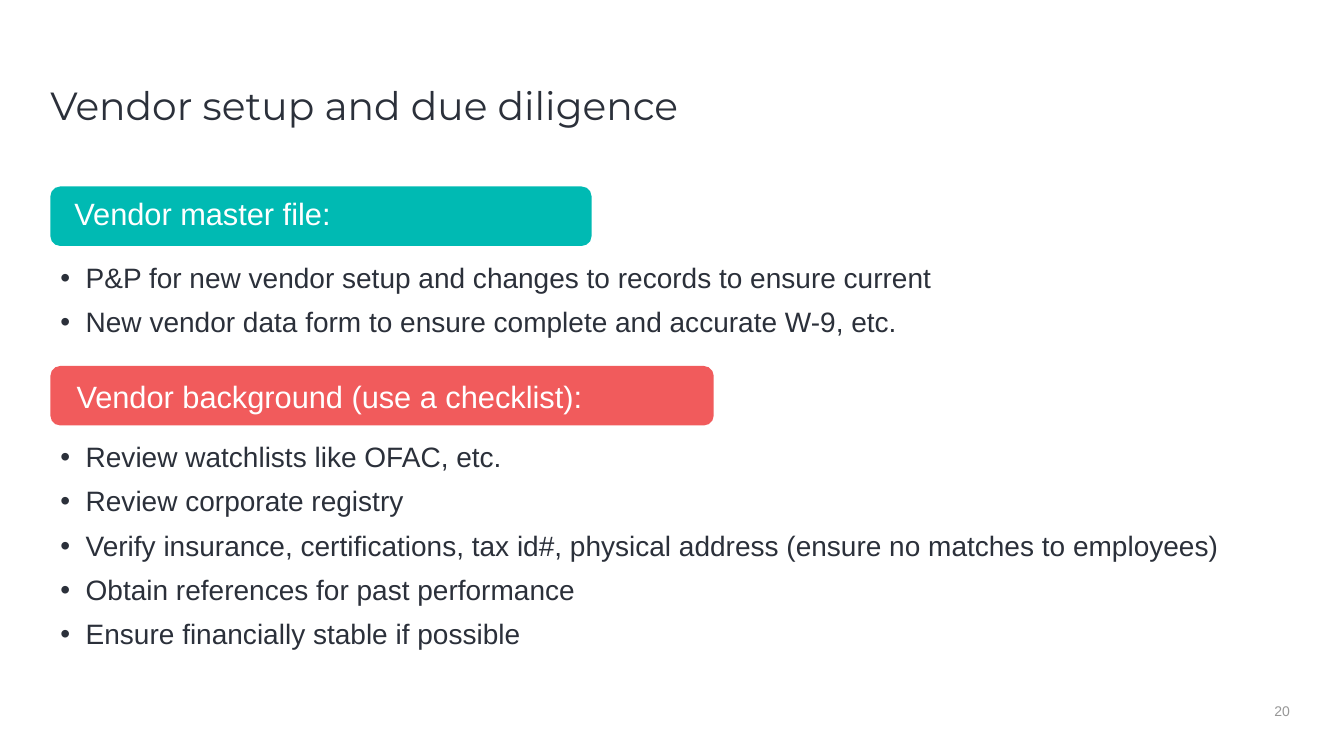
"""Build the slide on vendor setup and due diligence."""
from lxml.etree import SubElement
from pptx import Presentation
from pptx.dml.color import RGBColor
from pptx.enum.shapes import MSO_SHAPE
from pptx.enum.text import MSO_ANCHOR, MSO_AUTO_SIZE, PP_ALIGN
from pptx.oxml.ns import qn
from pptx.util import Pt

INK = RGBColor(0x2B, 0x30, 0x3A)
TEAL = RGBColor(0x00, 0xBA, 0xB3)
CORAL = RGBColor(0xF1, 0x5B, 0x5C)
WHITE = RGBColor(0xFF, 0xFF, 0xFF)
GREY = RGBColor(0x97, 0x97, 0x97)
LEFT, WIDTH = Pt(36), Pt(888)


def add_text(paragraph, text, size, color, font="Arial"):
    run = paragraph.add_run()
    run.text = text
    run.font.size = Pt(size)
    run.font.name = font
    run.font.color.rgb = color


def set_frame(frame, anchor, left, top, right, bottom):
    frame.word_wrap = True
    frame.auto_size = MSO_AUTO_SIZE.NONE
    frame.vertical_anchor = anchor
    frame.margin_left, frame.margin_top = Pt(left), Pt(top)
    frame.margin_right, frame.margin_bottom = Pt(right), Pt(bottom)


deck = Presentation()
deck.slide_width, deck.slide_height = Pt(960), Pt(540)
slide = deck.slides.add_slide(deck.slide_layouts[3])

title, master_file_list, background_list = slide.placeholders
title.left, title.top, title.width, title.height = LEFT, Pt(54.7), WIDTH, Pt(42.5)
set_frame(title.text_frame, MSO_ANCHOR.TOP, 0, 7.2, 0, 0)
heading = title.text_frame.paragraphs[0]
heading.alignment = PP_ALIGN.LEFT
heading.line_spacing = 0.9
add_text(heading, "Vendor setup and due diligence", 28, INK, "Montserrat")

sections = [
    (master_file_list, 185, 308, [
        "P&P for new vendor setup and changes to records to ensure current",
        "New vendor data form to ensure complete and accurate W-9, etc.",
    ]),
    (background_list, 313.2, 178.6, [
        "Review watchlists like OFAC, etc.",
        "Review corporate registry",
        "Verify insurance, certifications, tax id#, physical address (ensure no matches to employees)",
        "Obtain references for past performance",
        "Ensure financially stable if possible",
    ]),
]
for checklist, top, height, items in sections:
    checklist.left, checklist.top = LEFT, Pt(top)
    checklist.width, checklist.height = WIDTH, Pt(height)
    frame = checklist.text_frame
    set_frame(frame, MSO_ANCHOR.TOP, 7.2, 3.6, 7.2, 3.6)
    for index, item in enumerate(items):
        entry = frame.add_paragraph() if index else frame.paragraphs[0]
        entry.line_spacing = 0.9
        entry.space_before = Pt(10 if index else 0)
        properties = entry._p.get_or_add_pPr()
        properties.set("marL", str(Pt(18)))
        properties.set("indent", str(-Pt(18)))
        SubElement(properties, qn("a:buFont")).set("typeface", "Arial")
        SubElement(properties, qn("a:buChar")).set("char", "•")
        add_text(entry, item, 20, INK)

banners = [
    ("Vendor background (use a checklist):", CORAL, 261.4, 473.8, 16.6, 3.6),
    ("Vendor master file:", TEAL, 133.2, 386.6, 15.1, 7.2),
]
for label, color, top, width, inset, bottom in banners:
    banner = slide.shapes.add_shape(
        MSO_SHAPE.ROUNDED_RECTANGLE, LEFT, Pt(top), Pt(width), Pt(42.5))
    banner.shadow.inherit = False
    banner.fill.solid()
    banner.fill.fore_color.rgb = color
    banner.line.fill.background()
    set_frame(banner.text_frame, MSO_ANCHOR.MIDDLE, inset, 3.6, 7.2, bottom)
    caption = banner.text_frame.paragraphs[0]
    caption.alignment = PP_ALIGN.LEFT
    add_text(caption, label, 22, WHITE)

page_number = slide.shapes.add_textbox(Pt(901.4), Pt(501.8), Pt(28.8), Pt(12.2))
set_frame(page_number.text_frame, MSO_ANCHOR.MIDDLE, 0, 0, 0, 0)
folio = page_number.text_frame.paragraphs[0]
folio.alignment = PP_ALIGN.CENTER
add_text(folio, "20", 10, GREY)

deck.save("out.pptx")
